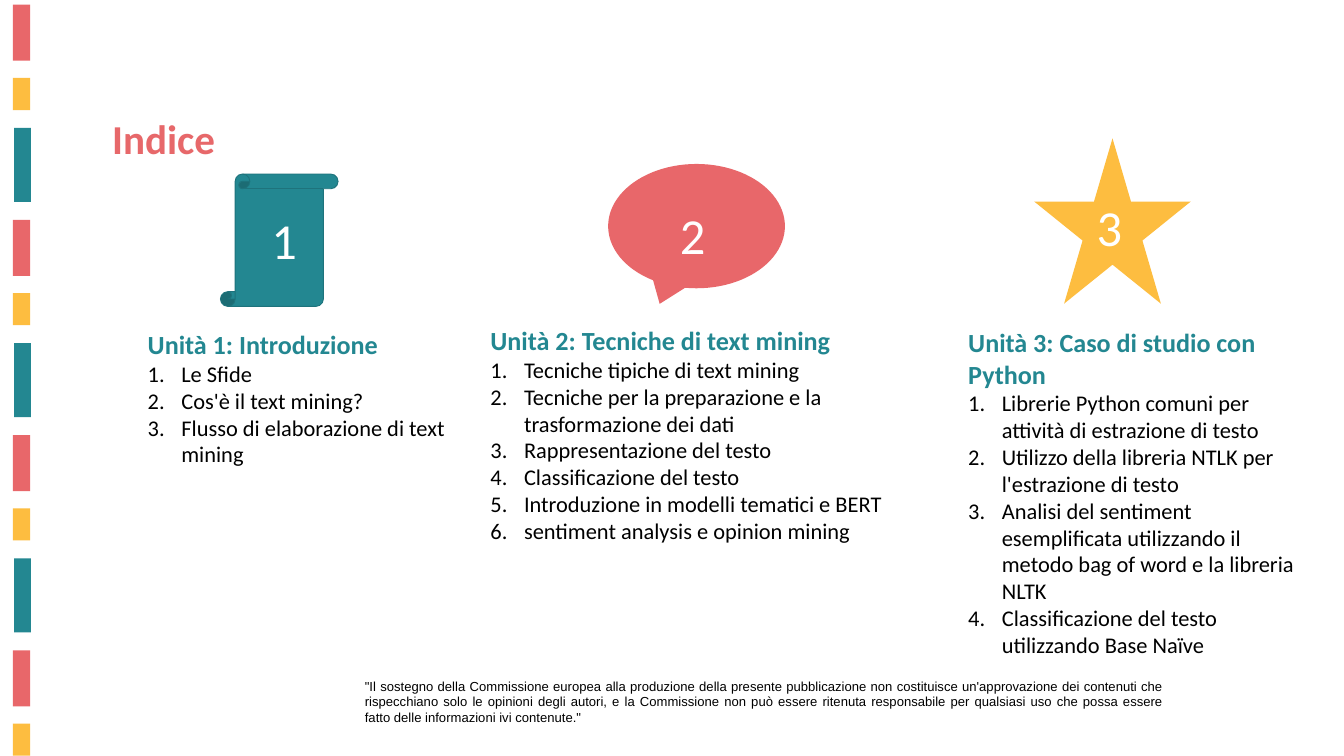
from lxml import etree
from pptx import Presentation
from pptx.dml.color import RGBColor
from pptx.enum.shapes import MSO_SHAPE
from pptx.enum.text import MSO_ANCHOR, MSO_AUTO_SIZE, PP_ALIGN
from pptx.oxml.ns import qn
from pptx.util import Pt

RECT = MSO_SHAPE.RECTANGLE
SCROLL = MSO_SHAPE.VERTICAL_SCROLL
SPEECH = MSO_SHAPE.OVAL_CALLOUT
STAR = MSO_SHAPE.STAR_5_POINT
TOP = MSO_ANCHOR.TOP
FIT = MSO_AUTO_SIZE.SHAPE_TO_FIT_TEXT
LEFT, JUSTIFY = PP_ALIGN.LEFT, PP_ALIGN.JUSTIFY

RED, GOLD, TEAL = "E8676A", "FDBD40", "238791"

# left, top, width, height, colour; the group repeats down the edge
STRIPES = [
    (13.7, 5, 18.7, 60, RED),
    (13.7, 83.5, 18.7, 34.4, GOLD),
    (15.1, 137, 18, 79.4, TEAL),
]
STEP = 230.6

UNITS = [
    ((151.2, 348.5, 354.2, 220.3), "Unità 1: Introduzione", [
        "Le Sfide",
        "Cos'è il text mining?",
        "Flusso di elaborazione di text mining",
    ]),
    ((518.4, 344.2, 487.4, 273.6), "Unità 2: Tecniche di text mining", [
        "Tecniche tipiche di text mining",
        "Tecniche per la preparazione e la trasformazione dei dati",
        "Rappresentazione del testo",
        "Classificazione del testo",
        "Introduzione in modelli tematici e BERT",
        "sentiment analysis e opinion mining",
    ]),
    ((1030.3, 346.3, 387.4, 273.6), "Unità 3: Caso di studio con Python", [
        "Librerie Python comuni per attività di estrazione di testo",
        "Utilizzo della libreria NTLK per l'estrazione di testo",
        "Analisi del sentiment esemplificata utilizzando il metodo "
        "bag of word e la libreria NLTK",
        "Classificazione del testo utilizzando Base Naïve",
    ]),
]

# shape, its box, fill, line, box of the number
ICONS = [
    (SCROLL, (236.2, 186.5, 126, 141.8), TEAL, "1E737C", (283.7, 221, 113.8, 72.7)),
    (SPEECH, (651.6, 175.7, 189.4, 133.2), RED, None, (721.4, 215.3, 77.8, 72.7)),
    (STAR, (1108.1, 148.3, 167.8, 177.1), GOLD, None, (1167.8, 206.6, 108, 72.7)),
]

NOTICE = (
    "\"Il sostegno della Commissione europea alla produzione della presente "
    "pubblicazione non costituisce un'approvazione dei contenuti che "
    "rispecchiano solo le opinioni degli autori, e la Commissione non può "
    "essere ritenuta responsabile per qualsiasi uso che possa essere fatto "
    "delle informazioni ivi contenute.\""
)


def rgb(code):
    return RGBColor.from_string(code)


def points(box):
    return [Pt(n) for n in box]


def write(para, text, size=24, color="000000", bold=False, font="Calibri", align=LEFT):
    para.alignment = align
    run = para.add_run()
    run.text = text
    run.font.size = Pt(size)
    run.font.name = font
    run.font.bold = bold
    run.font.color.rgb = rgb(color)


def set_frame(frame):
    frame.word_wrap = True
    frame.auto_size = FIT
    frame.vertical_anchor = TOP
    return frame


def add_text(slide, box, text, **form):
    frame = set_frame(slide.shapes.add_textbox(*points(box)).text_frame)
    write(frame.paragraphs[0], text, **form)
    return frame


def add_shape(slide, kind, box, fill, line=None):
    shape = slide.shapes.add_shape(kind, *points(box))
    shape.shadow.inherit = False
    shape.fill.solid()
    shape.fill.fore_color.rgb = rgb(fill)
    if line:
        shape.line.color.rgb = rgb(line)
        shape.line.width = Pt(1)
    else:
        shape.line.fill.background()


def number(para):
    """Make the paragraph a numbered item with a hanging indent."""
    props = para._p.get_or_add_pPr()
    props.set("marL", str(Pt(36)))
    props.set("indent", str(-Pt(36)))
    etree.SubElement(props, qn("a:buFont"), typeface="+mj-lt")
    etree.SubElement(props, qn("a:buAutoNum"), type="arabicPeriod")


def add_stripes(slide):
    for i in range(11):
        turn, kind = divmod(i, len(STRIPES))
        left, top, width, height, color = STRIPES[kind]
        add_shape(slide, RECT, (left, top + turn * STEP, width, height), color)


def add_title(slide, box, text):
    title = slide.shapes.title
    title.left, title.top, title.width, title.height = points(box)
    frame = set_frame(title.text_frame)
    write(frame.paragraphs[0], text, size=44, color="E7686A", bold=True)


def add_unit(slide, box, head, items):
    frame = add_text(slide, box, head, size=28, color=TEAL, bold=True)
    for item in items:
        para = frame.add_paragraph()
        number(para)
        write(para, item)


def main():
    deck = Presentation()
    deck.slide_width, deck.slide_height = Pt(1440), Pt(810)
    slide = deck.slides.add_slide(deck.slide_layouts[5])
    add_stripes(slide)
    add_text(slide, (383.8, 722.9, 869.8, 58.3), NOTICE,
             size=14, font="Arial", align=JUSTIFY)
    add_title(slide, (113, 118.1, 487.4, 60.5), "Indice")
    for unit in UNITS:
        add_unit(slide, *unit)
    for i, (kind, box, fill, line, spot) in enumerate(ICONS, 1):
        add_shape(slide, kind, box, fill, line)
        add_text(slide, spot, str(i), size=54, color="FFFFFF")
    deck.save("out.pptx")


if __name__ == "__main__":
    main()
